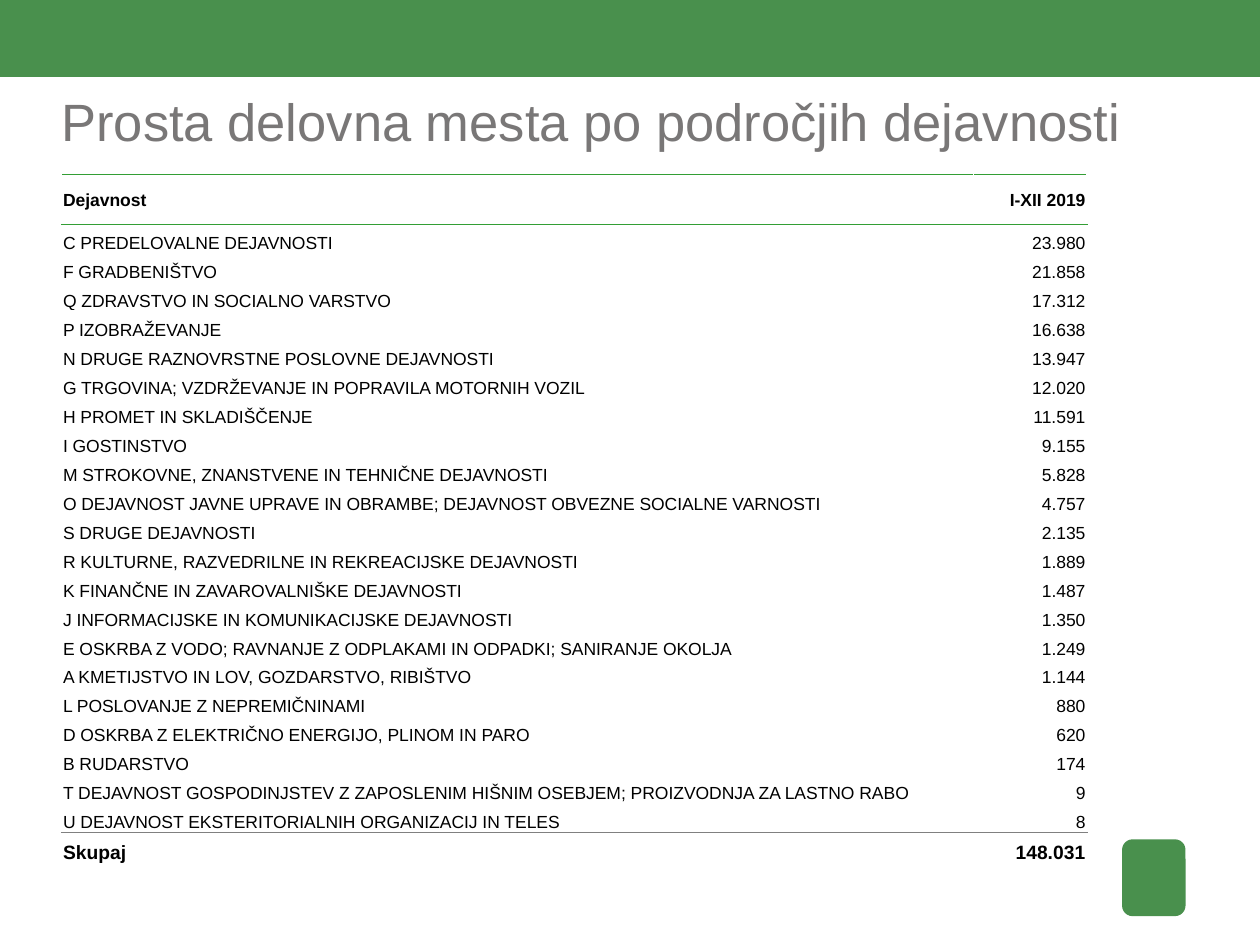
from pptx import Presentation
from pptx.dml.color import RGBColor
from pptx.enum.shapes import MSO_SHAPE as SHAPE
from pptx.enum.text import MSO_ANCHOR as ANCHOR, PP_ALIGN as ALIGN
from pptx.oxml import parse_xml
from pptx.oxml.ns import nsdecls
from pptx.util import Cm, Pt

TITLE = "Prosta delovna mesta po področjih dejavnosti"
HEADER = ("Dejavnost", "I-XII 2019")
ACTIVITIES = [
    ("C PREDELOVALNE DEJAVNOSTI", "23.980"),
    ("F GRADBENIŠTVO", "21.858"),
    ("Q ZDRAVSTVO IN SOCIALNO VARSTVO", "17.312"),
    ("P IZOBRAŽEVANJE", "16.638"),
    ("N DRUGE RAZNOVRSTNE POSLOVNE DEJAVNOSTI", "13.947"),
    ("G TRGOVINA; VZDRŽEVANJE IN POPRAVILA MOTORNIH VOZIL", "12.020"),
    ("H PROMET IN SKLADIŠČENJE", "11.591"),
    ("I GOSTINSTVO", "9.155"),
    ("M STROKOVNE, ZNANSTVENE IN TEHNIČNE DEJAVNOSTI", "5.828"),
    ("O DEJAVNOST JAVNE UPRAVE IN OBRAMBE; DEJAVNOST OBVEZNE SOCIALNE VARNOSTI", "4.757"),
    ("S DRUGE DEJAVNOSTI", "2.135"),
    ("R KULTURNE, RAZVEDRILNE IN REKREACIJSKE DEJAVNOSTI", "1.889"),
    ("K FINANČNE IN ZAVAROVALNIŠKE DEJAVNOSTI", "1.487"),
    ("J INFORMACIJSKE IN KOMUNIKACIJSKE DEJAVNOSTI", "1.350"),
    ("E OSKRBA Z VODO; RAVNANJE Z ODPLAKAMI IN ODPADKI; SANIRANJE OKOLJA", "1.249"),
    ("A KMETIJSTVO IN LOV, GOZDARSTVO, RIBIŠTVO", "1.144"),
    ("L POSLOVANJE Z NEPREMIČNINAMI", "880"),
    ("D OSKRBA Z ELEKTRIČNO ENERGIJO, PLINOM IN PARO", "620"),
    ("B RUDARSTVO", "174"),
    ("T DEJAVNOST GOSPODINJSTEV Z ZAPOSLENIM HIŠNIM OSEBJEM; PROIZVODNJA ZA LASTNO RABO", "9"),
    ("U DEJAVNOST EKSTERITORIALNIH ORGANIZACIJ IN TELES", "8"),
]
TOTAL = ("Skupaj", "148.031")

COLORS = {"brand": "49904D", "title": "797777", "text": "000000",
          "head_rule": "339E35", "total_rule": "808080"}
FONT = "Arial"
LEFT = Cm(1.24)
COL_WIDTHS = (Cm(18.38), Cm(2.29))
HEAD_H, BODY_H, TOTAL_H = Cm(1), Cm(12.28), Cm(0.79)


def style(p, size, color, bold=False):
    p.font.name, p.font.size, p.font.bold = FONT, Pt(size), bold
    p.font.color.rgb = RGBColor.from_string(COLORS[color])


def add_block(s, kind, *box):
    sp = s.shapes.add_shape(kind, *box)
    sp.shadow.inherit = False
    sp.fill.solid()
    sp.fill.fore_color.rgb = RGBColor.from_string(COLORS["brand"])
    sp.line.fill.background()


def add_rule(cell, side, color):
    """Draw a thin cell border; side is "T" or "B"."""
    cell._tc.get_or_add_tcPr().append(parse_xml(
        f'<a:ln{side} {nsdecls("a")} w="6350"><a:solidFill>'
        f'<a:srgbClr val="{COLORS[color]}"/></a:solidFill></a:ln{side}>'))


def add_activity_table(s):
    rows = [HEADER, *ACTIVITIES, TOTAL]
    last = len(rows) - 1
    heights = [HEAD_H] + [BODY_H // len(ACTIVITIES)] * len(ACTIVITIES) + [TOTAL_H]
    rules = {0: {"T": "head_rule", "B": "head_rule"}, 1: {"T": "head_rule"},
             last - 1: {"B": "total_rule"}, last: {"T": "total_rule"}}
    table = s.shapes.add_table(len(rows), len(COL_WIDTHS), LEFT, Cm(3.52),
                               sum(COL_WIDTHS), sum(heights)).table
    table.first_row = table.horz_banding = False
    for col, width in zip(table.columns, COL_WIDTHS):
        col.width = width
    for i, (texts, height) in enumerate(zip(rows, heights)):
        table.rows[i].height = height
        outer = i in (0, last)
        for j, text in enumerate(texts):
            cell = table.cell(i, j)
            cell.margin_left = cell.margin_right = cell.margin_top = Cm(0.03)
            cell.margin_bottom = 0
            cell.vertical_anchor = ANCHOR.MIDDLE if outer else ANCHOR.BOTTOM
            for side, color in rules.get(i, {}).items():
                add_rule(cell, side, color)
            cell.fill.background()
            p = cell.text_frame.paragraphs[0]
            p.text = text
            p.alignment = ALIGN.RIGHT if j else ALIGN.LEFT
            style(p, 11 if i == last else 10, "text", outer)


def add_title(s):
    tf = s.shapes.add_textbox(LEFT, Cm(1.73), Cm(23.52), Cm(1.4)).text_frame
    tf.word_wrap = True
    tf.vertical_anchor = ANCHOR.MIDDLE
    tf.margin_left = tf.margin_right = tf.margin_top = tf.margin_bottom = 0
    tf.text = TITLE
    style(tf.paragraphs[0], 30, "title")


def main():
    prs = Presentation()
    prs.slide_width, prs.slide_height = Cm(25.4), Cm(19.05)
    s = prs.slides.add_slide(prs.slide_layouts[6])
    add_block(s, SHAPE.RECTANGLE, 0, 0, prs.slide_width, Cm(1.55))
    add_block(s, SHAPE.ROUNDED_RECTANGLE, Cm(22.62), Cm(16.92), Cm(1.28), Cm(1.55))
    add_title(s)
    add_activity_table(s)
    prs.save("out.pptx")


if __name__ == "__main__":
    main()
